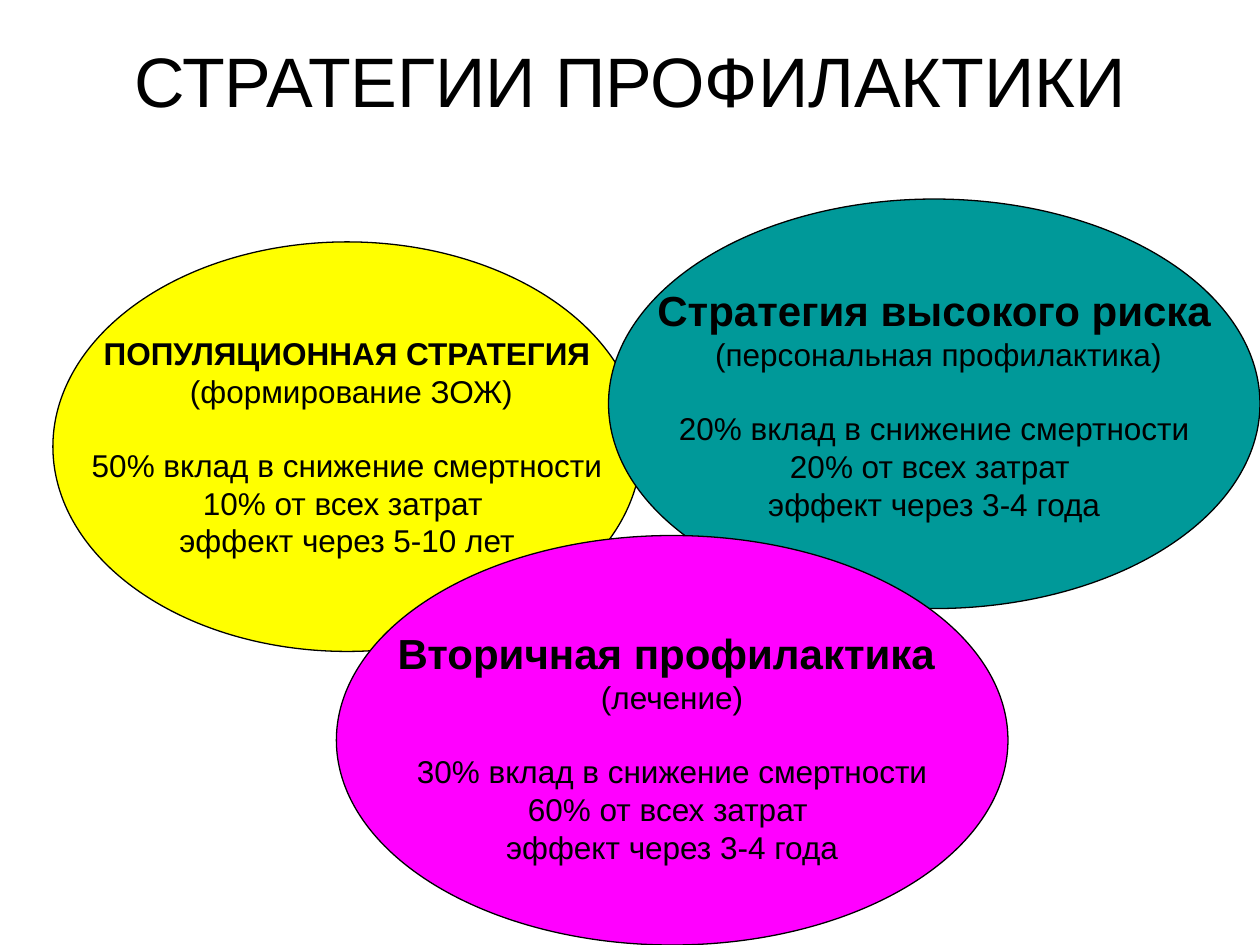
from dataclasses import dataclass

from pptx import Presentation
from pptx.dml.color import RGBColor
from pptx.enum.shapes import MSO_SHAPE
from pptx.enum.text import MSO_ANCHOR, PP_ALIGN
from pptx.util import Inches, Pt


@dataclass(frozen=True)
class Theme:
    """Colours, font and type sizes of the slide."""
    font: str = "Arial"
    ink: RGBColor = RGBColor(0, 0, 0)
    yellow: RGBColor = RGBColor(255, 255, 0)
    teal: RGBColor = RGBColor(0, 153, 153)
    magenta: RGBColor = RGBColor(255, 0, 255)
    title: Pt = Pt(40)
    heading: Pt = Pt(24)
    body: Pt = Pt(18)
    gap: Pt = Pt(20.7)
    outline: Pt = Pt(0.75)


THEME = Theme()


def add_line(paragraph, text, size, bold=False):
    """Write one centred line of text into a paragraph."""
    paragraph.alignment = PP_ALIGN.CENTER
    run = paragraph.add_run()
    run.text = text
    run.font.name = THEME.font
    run.font.size = size
    run.font.bold = bold
    run.font.color.rgb = THEME.ink


def add_title(slide, box, text):
    """Place the slide title at the top of its box."""
    frame = slide.shapes.add_textbox(*map(Inches, box)).text_frame
    frame.word_wrap = True
    frame.vertical_anchor = MSO_ANCHOR.TOP
    frame.margin_top = 0
    add_line(frame.paragraphs[0], text, THEME.title)


def add_strategy(slide, box, fill, heading, heading_size, subtitle, facts, top_inset=0.05):
    """Place an ellipse with a heading, a subtitle and a group of facts."""
    shape = slide.shapes.add_shape(MSO_SHAPE.OVAL, *map(Inches, box))
    shape.shadow.inherit = False
    shape.fill.solid()
    shape.fill.fore_color.rgb = fill
    shape.line.color.rgb = THEME.ink
    shape.line.width = THEME.outline
    frame = shape.text_frame
    frame.word_wrap = False
    frame.vertical_anchor = MSO_ANCHOR.MIDDLE
    frame.margin_top = Inches(top_inset)
    add_line(frame.paragraphs[0], heading, heading_size, bold=True)
    add_line(frame.add_paragraph(), subtitle, THEME.body)
    for index, fact in enumerate(facts):
        paragraph = frame.add_paragraph()
        if index == 0:
            paragraph.space_before = THEME.gap
        add_line(paragraph, fact, THEME.body)


def main():
    """Build and save the slide."""
    presentation = Presentation()
    presentation.slide_width = Inches(10)
    presentation.slide_height = Inches(7.5)
    slide = presentation.slides.add_slide(presentation.slide_layouts[6])
    add_title(slide, (0.5, 0.3, 9, 1.25), "СТРАТЕГИИ ПРОФИЛАКТИКИ")
    add_strategy(
        slide, (0.42, 1.92, 4.67, 3.25), THEME.yellow,
        "ПОПУЛЯЦИОННАЯ СТРАТЕГИЯ", THEME.body, " (формирование ЗОЖ)",
        ("50% вклад в снижение смертности", "10% от всех затрат ", "эффект через 5-10 лет"),
    )
    add_strategy(
        slide, (4.83, 1.58, 5.17, 3.25), THEME.teal,
        "Стратегия высокого риска", THEME.heading, " (персональная профилактика)",
        ("20% вклад в снижение смертности", "20% от всех затрат ", "эффект через 3-4 года"),
    )
    add_strategy(
        slide, (2.67, 4.25, 5.33, 3.25), THEME.magenta,
        "Вторичная профилактика ", THEME.heading, "(лечение)",
        ("30% вклад в снижение смертности", "60% от всех затрат ", "эффект через 3-4 года"),
        top_inset=0.15,
    )
    presentation.save("out.pptx")


if __name__ == "__main__":
    main()
